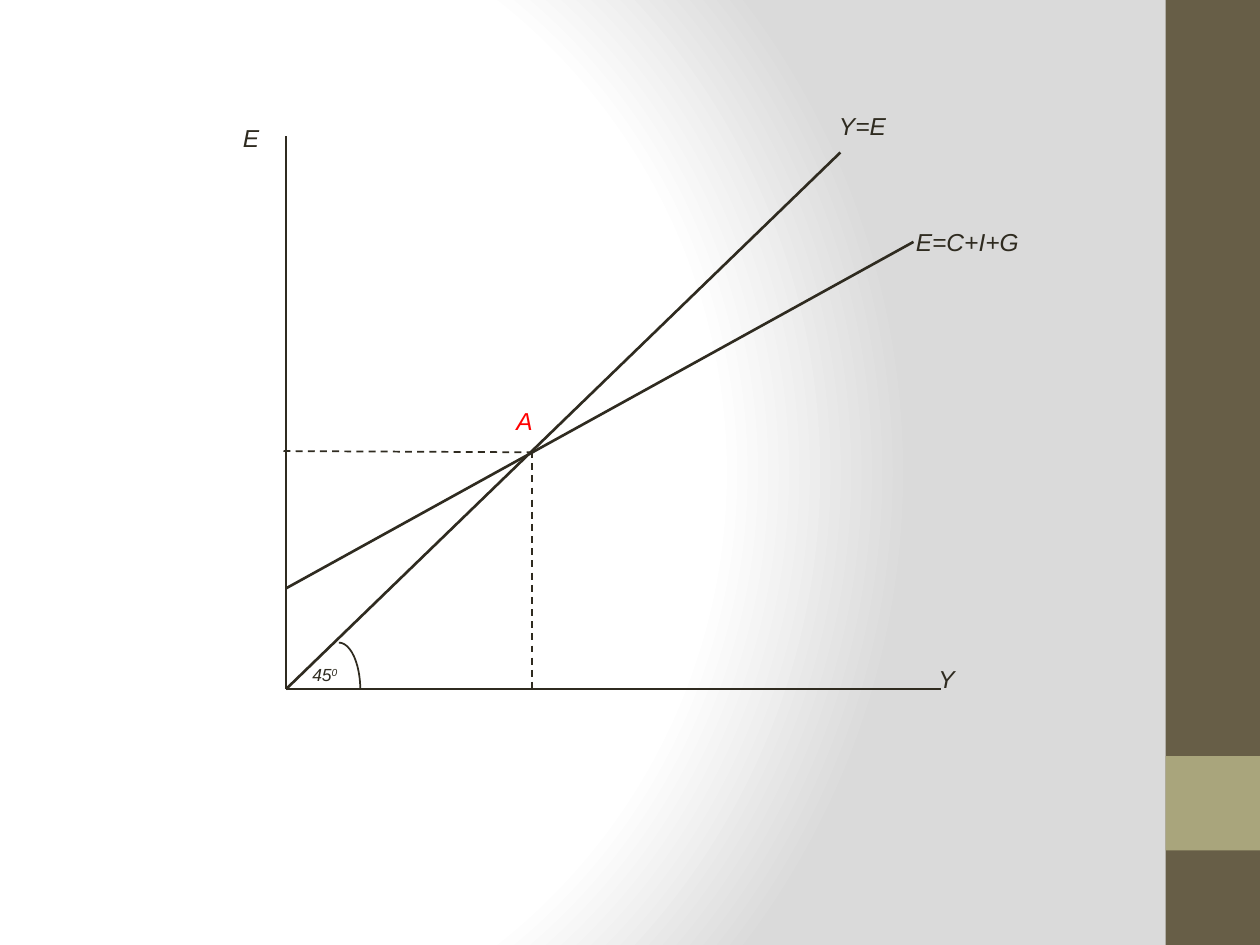
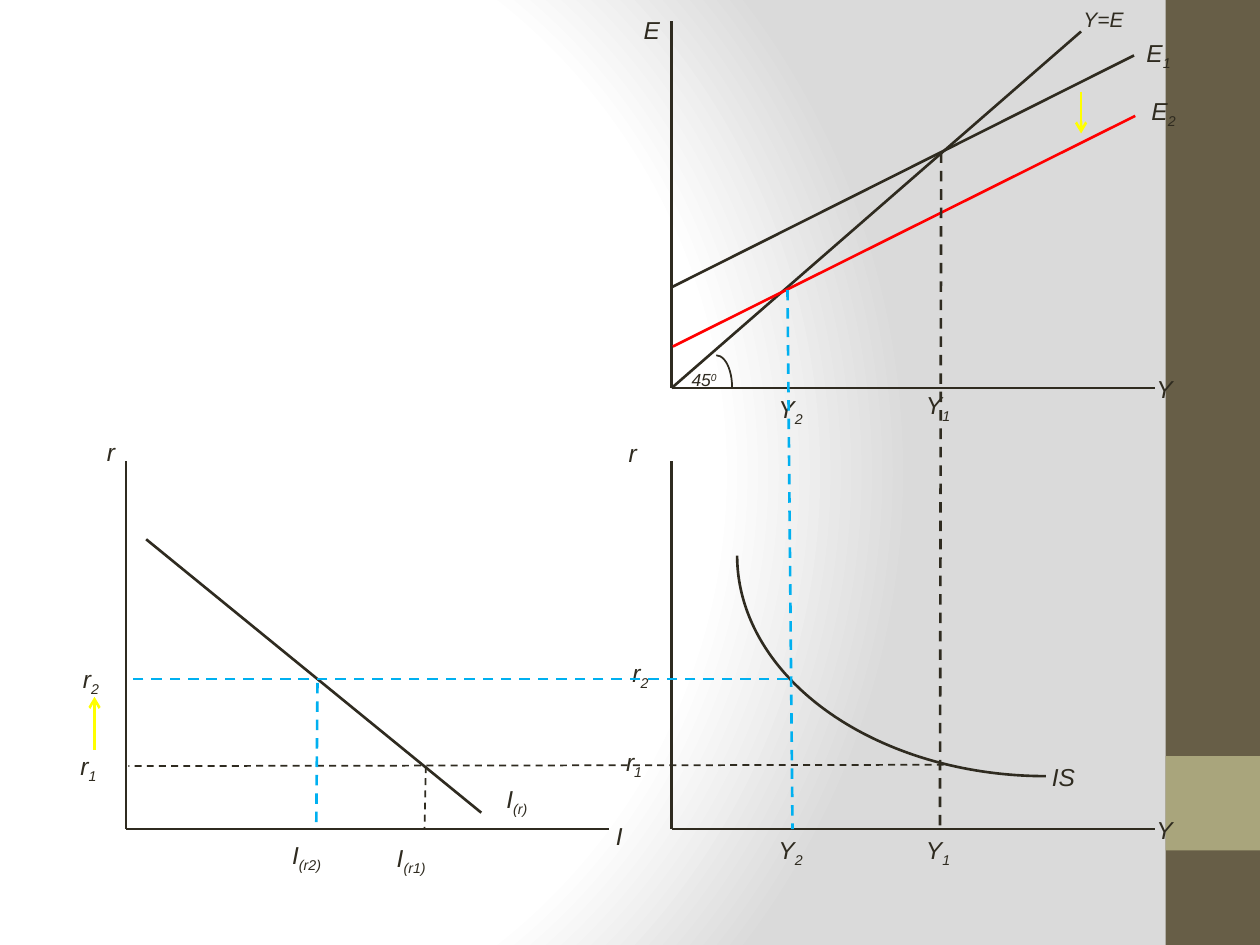
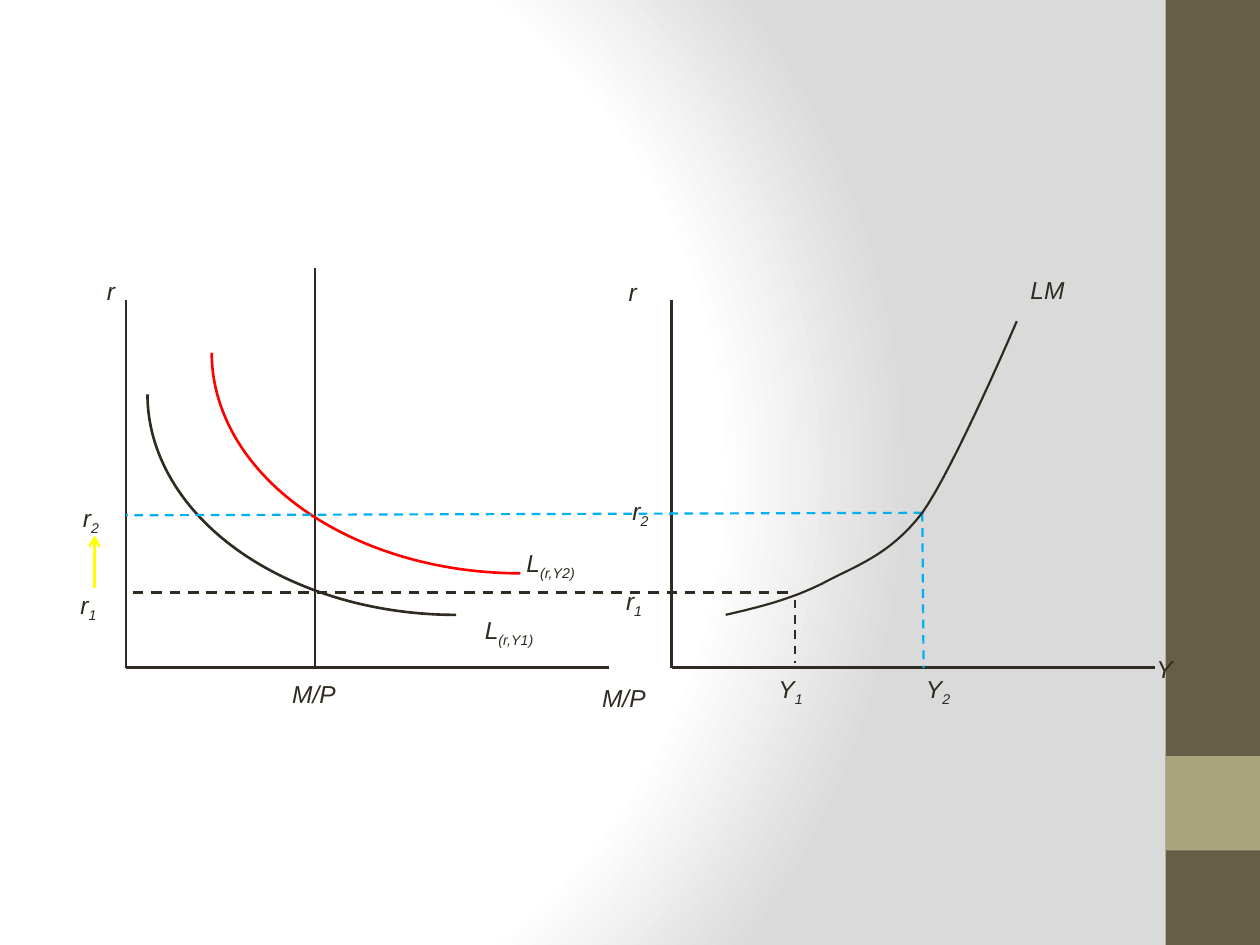
from dataclasses import dataclass

from lxml import etree
from pptx import Presentation
from pptx.dml.color import RGBColor
from pptx.enum import dml, shapes, text
from pptx.oxml import ns, parse_xml
from pptx.util import Inches, Pt

COLORS = {
    "ink": "2F2B20", "red": "FF0000", "blue": "00B0F0", "yellow": "FFFF00",
    "band": "675E47", "accent": "A9A57C", "white": "FFFFFF", "grey": "DADADA",
}
FONT = "Arial"
SUBSCRIPT, SUPERSCRIPT = -25, 30


@dataclass
class Line:
    x1: float
    y1: float
    x2: float
    y2: float
    color: str = "ink"
    weight: float = 1.5
    dashed: bool = False
    arrow: bool = False


@dataclass
class Arc:
    left: float
    top: float
    width: float
    height: float
    rotation: float = 0
    color: str = "ink"
    weight: float = 1.5


@dataclass
class Label:
    text: str
    left: float
    top: float
    index: str = ""
    width: float = 0.42
    height: float = 0.34
    size: float = 14
    color: str = "ink"
    baseline: int = SUBSCRIPT


def rgb(name: str) -> RGBColor:
    return RGBColor.from_string(COLORS[name])


# Drawing functions
def draw_line(page, line: Line) -> None:
    ends = [Inches(v) for v in (line.x1, line.y1, line.x2, line.y2)]
    connector = page.shapes.add_connector(shapes.MSO_CONNECTOR.STRAIGHT, *ends)
    connector.line.color.rgb = rgb(line.color)
    connector.line.width = Pt(line.weight)
    if line.dashed:
        connector.line.dash_style = dml.MSO_LINE.DASH
    properties = connector.element.spPr
    if line.arrow:
        outline = properties.find(ns.qn("a:ln"))
        etree.SubElement(outline, ns.qn("a:tailEnd"), type="arrow")
    etree.SubElement(properties, ns.qn("a:effectLst"))


def style_curve(shape, color: str, weight: float) -> None:
    shape.shadow.inherit = False
    shape.fill.background()
    shape.line.color.rgb = rgb(color)
    shape.line.width = Pt(weight)


def draw_arc(page, arc: Arc) -> None:
    frame = [Inches(v) for v in (arc.left, arc.top, arc.width, arc.height)]
    shape = page.shapes.add_shape(shapes.MSO_SHAPE.ARC, *frame)
    shape.rotation = arc.rotation
    style_curve(shape, arc.color, arc.weight)


def draw_label(page, label: Label) -> None:
    frame = [Inches(v) for v in (label.left, label.top, label.width, label.height)]
    box = page.shapes.add_textbox(*frame)
    box.text_frame.word_wrap = True
    box.text_frame.auto_size = text.MSO_AUTO_SIZE.SHAPE_TO_FIT_TEXT
    box.text_frame.text = label.text
    para = box.text_frame.paragraphs[0]
    if label.index:
        para.add_run().text = label.index
    for span in para.runs:
        span.font.name = FONT
        span.font.size = Pt(label.size)
        span.font.italic = True
        span.font.color.rgb = rgb(label.color)
    if label.index:
        properties = list(box.element.iter(ns.qn("a:rPr")))
        properties[-1].set("baseline", str(label.baseline * 1000))


DRAW = {Line: draw_line, Arc: draw_arc, Label: draw_label}


def draw(page, *items: Line | Arc | Label) -> None:
    for item in items:
        DRAW[type(item)](page, item)


def draw_axes(page, left: float, top: float, right: float, base: float) -> None:
    draw(page, Line(left, top, left, base), Line(left, base, right, base))


def draw_bezier(page, start: tuple, segments: list, weight: float, steps: int = 16) -> None:
    points, p0 = [], start
    for p1, p2, p3 in segments:
        for step in range(1, steps + 1):
            t = step / steps
            u = 1 - t
            points.append(tuple(
                Inches(u**3 * a + 3 * u * u * t * b + 3 * u * t * t * c + t**3 * d)
                for a, b, c, d in zip(p0, p1, p2, p3)))
        p0 = p3
    builder = page.shapes.build_freeform(Inches(start[0]), Inches(start[1]))
    builder.add_line_segments(points, close=False)
    style_curve(builder.convert_to_shape(), "ink", weight)


# Shared look
def set_background(deck) -> None:
    master = deck.slide_master
    master.background.fill.solid()
    holder = master.element.find(".//" + ns.qn("p:bgPr"))
    stops = "".join(
        f'<a:gs pos="{position * 1000}"><a:srgbClr val="{COLORS[name]}"/></a:gs>'
        for position, name in ((0, "white"), (75, "white"), (100, "grey")))
    gradient = parse_xml(
        f'<a:gradFill {ns.nsdecls("a")} rotWithShape="1"><a:gsLst>{stops}</a:gsLst>'
        '<a:path path="circle"><a:fillToRect l="20000" t="50000" r="100000" b="50000"/>'
        '</a:path></a:gradFill>')
    holder.replace(holder[0], gradient)


def add_page(deck):
    page = deck.slides.add_slide(deck.slide_layouts[6])
    for top, height, color in ((0, 7.5, "band"), (6, 0.75, "accent")):
        band = page.shapes.add_shape(
            shapes.MSO_SHAPE.RECTANGLE, Inches(9.25), Inches(top), Inches(0.75), Inches(height))
        band.shadow.inherit = False
        band.fill.solid()
        band.fill.fore_color.rgb = rgb(color)
        band.line.fill.background()
    return page


def draw_rate_panels(page, base: float, left_tick: str, right_tick: str) -> None:
    """Two interest-rate graphs side by side, standing on the same base line."""
    for left, right in ((1, 4.83), (5.33, 9.17)):
        draw_axes(page, left, base - 2.92, right, base)
    draw(
        page,
        Label("r", 0.75, base - 3.16),
        Label("r", 4.89, base - 3.15),
        Label("r", 0.56, base - 1.36, "2"),
        Label("r", 0.54, base - 0.67, "1"),
        Label("r", 4.92, base - 1.41, "2"),
        Label("r", 4.87, base - 0.7, "1"),
        Label("Y", 9.08, base - 0.16),
        Label("Y", 6.08, base, left_tick),
        Label("Y", 7.25, base, right_tick),
        Line(0.75, base - 0.63, 0.75, base - 1.05, "yellow", arrow=True),
    )


# Slides
def build_keynesian_cross(deck) -> None:
    page = add_page(deck)
    draw_axes(page, 2.27, 1.08, 7.47, 5.47)
    draw(
        page,
        Line(2.27, 5.47, 6.67, 1.21),
        Line(2.27, 4.67, 7.25, 1.92),
        Label("E=C+I+G", 7.17, 1.75, width=1.29),
        Label("Y=E", 6.56, 0.83, width=0.79),
        Label("Y", 7.35, 5.22, width=0.57),
        Label("E", 1.83, 0.93, width=0.57),
        Arc(2.52, 5.1, 0.34, 0.75, weight=1),
        Label("45", 2.38, 5.22, "0", 0.68, 0.4, 10, baseline=SUPERSCRIPT),
        Line(2.25, 3.58, 4.25, 3.59, weight=1, dashed=True),
        Line(4.22, 3.58, 4.22, 5.5, weight=1, dashed=True),
        Label("A", 4, 3.17, width=0.57, color="red"),
    )


def build_is_curve(deck) -> None:
    page = add_page(deck)
    draw_rate_panels(page, 6.58, "2", "1")
    draw_axes(page, 5.33, 0.17, 9.17, 3.08)
    draw(
        page,
        # Expenditure lines
        Line(5.33, 3.08, 8.58, 0.25),
        Line(5.33, 2.28, 9, 0.44),
        Line(5.34, 2.75, 9.01, 0.92, "red"),
        Line(8.58, 0.73, 8.58, 1.06, "yellow", arrow=True),
        Arc(5.56, 2.82, 0.25, 0.5, weight=1),
        Label("45", 5.39, 2.88, "0", 0.5, 0.27, 10, baseline=SUPERSCRIPT),
        Label("Y=E", 8.5, 0, width=0.58, height=0.3, size=12),
        Label("E", 5.01, 0.07),
        Label("E", 9, 0.25, "1"),
        Label("E", 9.04, 0.71, "2"),
        Label("Y", 9.08, 2.92),
        Label("Y", 6.08, 3.08, "2"),
        Label("Y", 7.25, 3.05, "1"),
        # Investment and IS curves
        Line(1.16, 4.28, 3.82, 6.45),
        Arc(5.85, 2.66, 4.9, 3.5, 180),
        Label("I", 3.92, 6.17, "(r)"),
        Label("I", 4.79, 6.47),
        Label("IS", 8.25, 6),
        Label("I", 2.22, 6.62, "(r2)", 0.58),
        Label("I", 3.05, 6.64, "(r1)", 0.58),
        # Guides
        Line(6.25, 2.3, 6.29, 6.58, "blue", dashed=True),
        Line(7.47, 1.21, 7.46, 6.58, dashed=True),
        Line(6.25, 5.39, 1, 5.39, "blue", dashed=True),
        Line(7.49, 6.07, 1.02, 6.08, weight=1, dashed=True),
        Line(2.52, 5.42, 2.51, 6.58, "blue", dashed=True),
        Line(3.38, 6.08, 3.37, 6.58, weight=1, dashed=True),
    )


def build_lm_curve(deck) -> None:
    page = add_page(deck)
    draw_rate_panels(page, 5.3, "1", "2")
    draw(
        page,
        # Money supply and demand
        Line(2.5, 2.13, 2.5, 5.3),
        Arc(1.17, 1.38, 4.9, 3.5, 180),
        Arc(1.68, 1.05, 4.9, 3.5, 180, "red"),
        Label("L", 3.75, 4.83, "(r,Y1)", 0.83),
        Label("L", 4.08, 4.3, "(r,Y2)", 0.83),
        Label("M/P", 2.22, 5.34, width=0.58),
        Label("M/P", 4.68, 5.37, width=0.58),
        Label("LM", 8.08, 2.13, width=0.58),
        # Guides
        Line(6.25, 4.7, 1, 4.7, dashed=True),
        Line(7.32, 4.07, 1, 4.09, "blue", 1.25, dashed=True),
        Line(6.31, 4.76, 6.31, 5.26, weight=1.25, dashed=True),
        Line(7.32, 4.07, 7.33, 5.3, "blue", 1.25, dashed=True),
    )
    draw_bezier(page, (5.76, 4.88), [
        ((6.02, 4.82), (6.27, 4.76), (6.53, 4.63)),
        ((6.79, 4.49), (7.06, 4.41), (7.32, 4.07)),
        ((7.57, 3.72), (8.07, 2.55), (8.07, 2.55)),
    ], weight=1.25)


def main() -> None:
    deck = Presentation()
    deck.slide_width, deck.slide_height = Inches(10), Inches(7.5)
    set_background(deck)
    build_keynesian_cross(deck)
    build_is_curve(deck)
    build_lm_curve(deck)
    deck.save("out.pptx")


if __name__ == "__main__":
    main()
